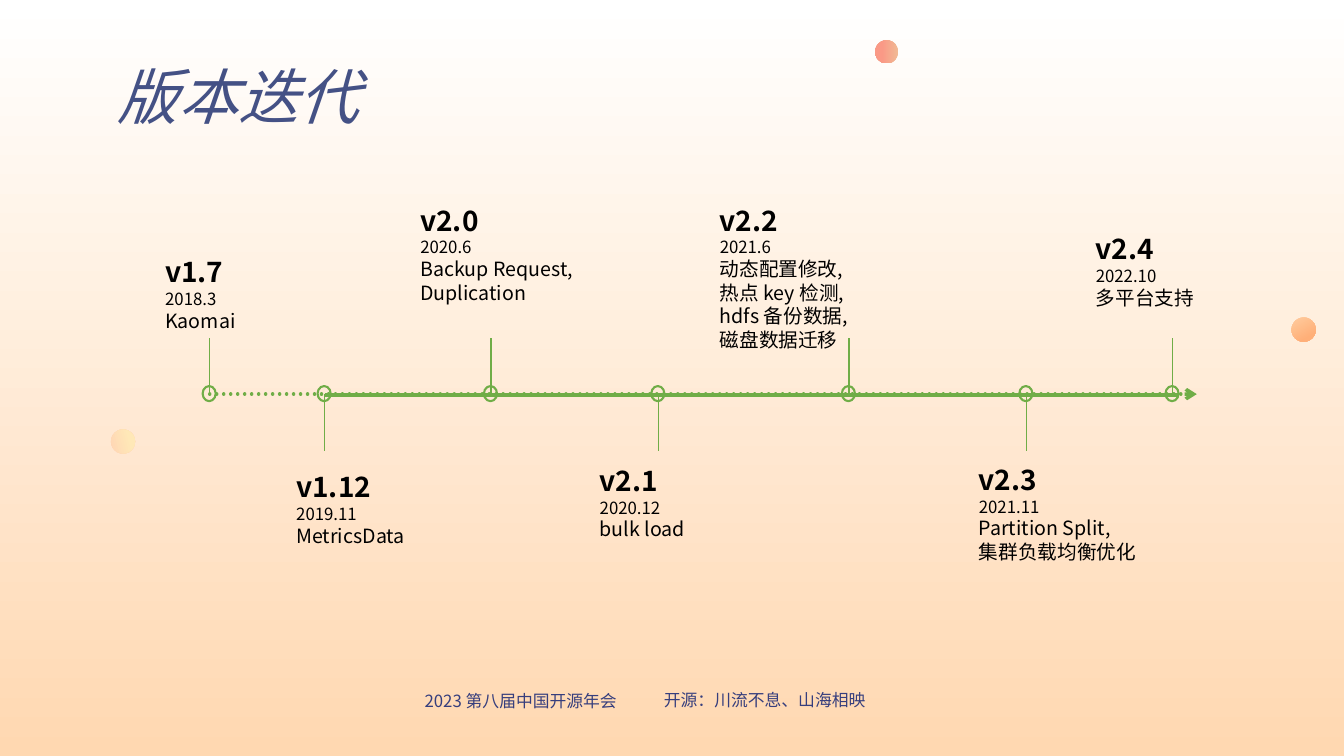
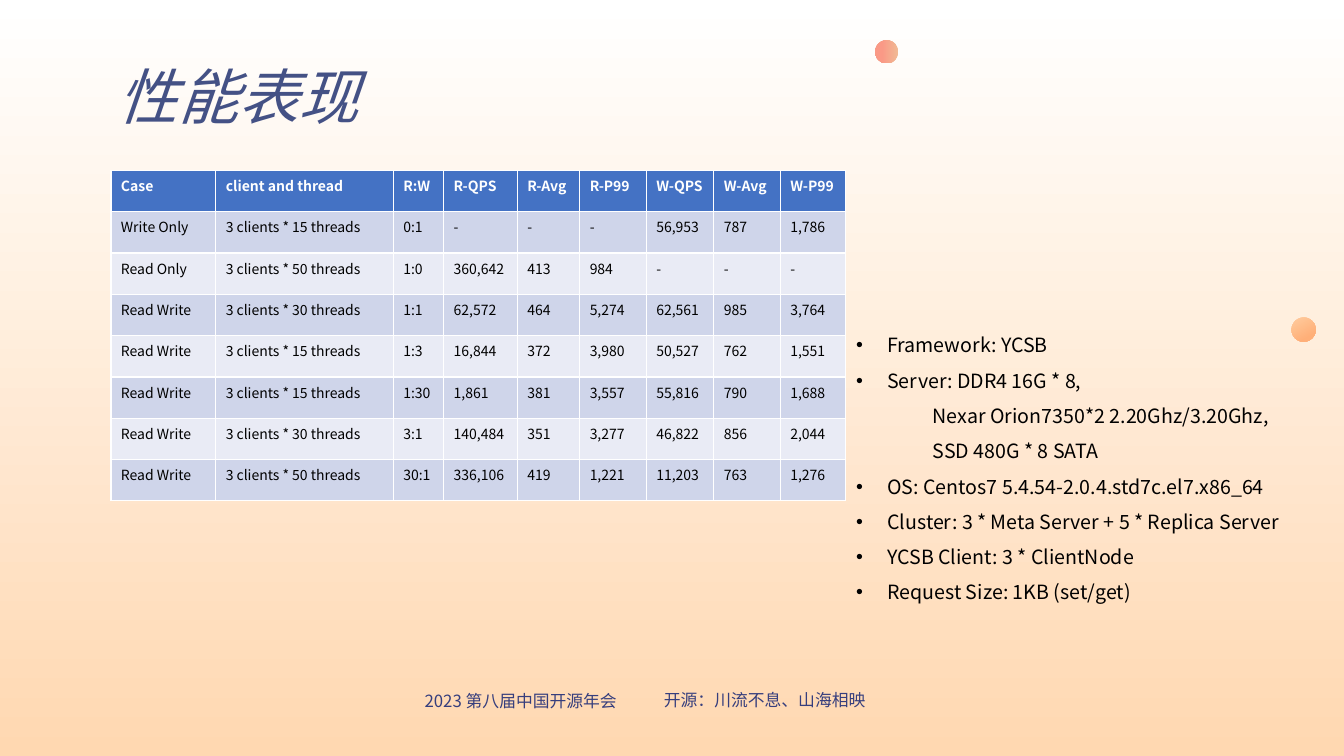
from dataclasses import dataclass

from lxml import etree
from pptx import Presentation
from pptx.dml.color import RGBColor
from pptx.enum.dml import MSO_LINE
from pptx.enum.shapes import MSO_CONNECTOR, MSO_SHAPE
from pptx.enum.text import MSO_ANCHOR, MSO_AUTO_SIZE, PP_ALIGN
from pptx.oxml.ns import qn
from pptx.util import Pt

PX = 9144  # EMU per px, 100 px to the inch
DOTS = MSO_LINE.ROUND_DOT
LINE = MSO_CONNECTOR.STRAIGHT
OVAL = MSO_SHAPE.OVAL
MIDDLE, TOP = MSO_ANCHOR.MIDDLE, MSO_ANCHOR.TOP
FIXED = MSO_AUTO_SIZE.NONE
LEFT, CENTER = PP_ALIGN.LEFT, PP_ALIGN.CENTER
TITLE_BODY, TITLE_ONLY = 1, 5


@dataclass(frozen=True)
class Theme:
    font: str = "Noto Sans CJK SC"
    sky: tuple = ("FFFFFF", "FFD8B1")
    title: str = "445185"
    foot: str = "363E7D"
    ink: str = "000000"
    white: str = "FFFFFF"
    green: str = "70AD47"
    head: str = "4472C4"
    bands: tuple = ("CFD5EA", "E9EBF5")
    title_pt: int = 43
    mark_pt: int = 20
    list_pt: int = 14
    small_pt: int = 12
    cell_pt: int = 10


T = Theme()

FOOTS = [
    ((379, 680, 275, 30), "2023 第八届中国开源年会"),
    ((638, 679, 241, 30), "开源：川流不息、山海相映"),
]
BALLS = [  # left, top, size, turn, colours
    (1281, 315, 24, 331, ("FFD3A7", "FFAF78")),
    (868, 40, 23, 90, ("F1B994", "FA9986")),
    (110, 426, 24, 255, ("FFD3B4", "FFE8B7")),
]
MARKS = [  # x on axis, stem side, label box, lines
    (54, -1, (0, 51, 108, 79), ["v1.7", "2018.3", "Kaomai"]),
    (168, 1, (130, 264, 147, 85), ["v1.12", "2019.11", "MetricsData"]),
    (333, -1, (253, 0, 202, 102),
     ["v2.0", "2020.6", "Backup Request, Duplication"]),
    (499, 1, (431, 258, 136, 102), ["v2.1", "2020.12", "bulk load"]),
    (688, -1, (550, 0, 202, 102),
     ["v2.2", "2021.6", "动态配置修改,", "热点 key 检测,", "hdfs 备份数据,",
      "磁盘数据迁移"]),
    (864, 1, (807, 257, 202, 102),
     ["v2.3", "2021.11", "Partition Split,", "集群负载均衡优化"]),
    (1009, -1, (923, 28, 136, 102), ["v2.4", "2022.10", "多平台支持"]),
]
COLS = [104, 176, 50, 73, 62, 66, 67, 66, 65]
ROWS = [
    ["Case", "client and thread", "R:W", "R-QPS", "R-Avg", "R-P99",
     "W-QPS", "W-Avg", "W-P99"],
    ["Write Only", "3 clients * 15 threads", "0:1", "-", "-", "-",
     "56,953", "787", "1,786"],
    ["Read Only", "3 clients * 50 threads", "1:0", "360,642", "413", "984",
     "-", "-", "-"],
    ["Read Write", "3 clients * 30 threads", "1:1", "62,572", "464", "5,274",
     "62,561", "985", "3,764"],
    ["Read Write", "3 clients * 15 threads", "1:3", "16,844", "372", "3,980",
     "50,527", "762", "1,551"],
    ["Read Write", "3 clients * 15 threads", "1:30", "1,861", "381", "3,557",
     "55,816", "790", "1,688"],
    ["Read Write", "3 clients * 30 threads", "3:1", "140,484", "351", "3,277",
     "46,822", "856", "2,044"],
    ["Read Write", "3 clients * 50 threads", "30:1", "336,106", "419", "1,221",
     "11,203", "763", "1,276"],
]
SETUP = [  # level, text
    (0, "Framework: YCSB"),
    (0, "Server: DDR4 16G * 8,"),
    (1, "Nexar Orion7350*2 2.20Ghz/3.20Ghz,"),
    (1, "SSD 480G * 8 SATA"),
    (0, "OS: Centos7 5.4.54-2.0.4.std7c.el7.x86_64"),
    (0, "Cluster: 3 * Meta Server + 5 * Replica Server"),
    (0, "YCSB Client: 3 * ClientNode"),
    (0, "Request Size: 1KB (set/get)"),
]


def emu(*vals):
    return [v * PX for v in vals]


def rgb(code):
    return RGBColor.from_string(code)


def place(shape, box):
    shape.left, shape.top, shape.width, shape.height = emu(*box)


def style(para, size, color, bold=False, italic=False):
    font = para.font
    font.name, font.size = T.font, Pt(size)
    font.bold, font.italic = bold, italic
    font.color.rgb = rgb(color)
    east = etree.SubElement(font._element, qn("a:ea"))
    east.set("typeface", T.font)


def blend(fill, colors, end=1.0):
    """Fill from top to bottom, reaching the second colour at end."""
    fill.gradient()
    fill.gradient_angle = 270
    for stop, color, pos in zip(fill.gradient_stops, colors, (0, end)):
        stop.color.rgb = rgb(color)
        stop.position = pos


def oval(slide, box):
    shape = slide.shapes.add_shape(OVAL, *emu(*box))
    shape.shadow.inherit = False
    return shape


def rule(slide, start, end, width):
    line = slide.shapes.add_connector(LINE, *emu(*start, *end))
    line.line.color.rgb = rgb(T.green)
    line.line.width = Pt(width)
    etree.SubElement(line._element.spPr, qn("a:effectLst"))
    return line


def label(slide, box, lines):
    frame = slide.shapes.add_textbox(*emu(*box)).text_frame
    frame.word_wrap = True
    frame.text = "\n".join(lines)
    return frame.paragraphs


def trim(slide):
    """Draw the footers and balls that every slide has."""
    for box, text in FOOTS:
        para = label(slide, box, [text])[0]
        para.alignment = CENTER
        style(para, T.small_pt, T.foot)
    for left, top, size, turn, colors in BALLS:
        ball = oval(slide, (left, top, size, size))
        ball.rotation = turn
        ball.line.fill.background()
        blend(ball.fill, colors, 0.71)


def start(deck, layout, title):
    slide = deck.slides.add_slide(deck.slide_layouts[layout])
    shape = slide.shapes.title
    place(shape, (107, 46, 361, 107))
    frame = shape.text_frame
    frame.text = title
    frame.auto_size, frame.vertical_anchor = FIXED, MIDDLE
    para = frame.paragraphs[0]
    para.alignment, para.line_spacing = LEFT, 0.9
    style(para, T.title_pt, T.title, italic=True)
    trim(slide)
    return slide


def timeline(slide, left, top, width):
    axis, stem = top + 194, 56
    first, second = (left + mark[0] for mark in MARKS[:2])
    end = left + width
    dotted = rule(slide, (first, axis), (end, axis), 2.5)
    dotted.line.dash_style = DOTS
    props = dotted.line._get_or_add_ln()
    props.set("cap", "rnd")
    etree.SubElement(props, qn("a:tailEnd")).set("type", "arrow")
    rule(slide, (second, axis + 1), (end - 18, axis + 1), 2.5)
    for x, side, (dx, dy, wide, high), lines in MARKS:
        x += left
        ring = oval(slide, (x - 7, axis - 8, 13, 15))
        ring.fill.background()
        ring.line.color.rgb = rgb(T.green)
        ring.line.width = Pt(1.5)
        rule(slide, (x, axis), (x, axis + side * stem), 1)
        paras = label(slide, (left + dx, top + dy, wide, high), lines)
        for i, para in enumerate(paras):
            size = (T.mark_pt, T.small_pt, T.list_pt)[min(i, 2)]
            style(para, size, T.ink, bold=i == 0)


def grid(slide, left, top, high):
    box = emu(left, top, sum(COLS), high * len(ROWS))
    table = slide.shapes.add_table(len(ROWS), len(COLS), *box).table
    table.horz_banding = False
    for col, wide in zip(table.columns, COLS):
        col.width = wide * PX
    for i, (row, texts) in enumerate(zip(table.rows, ROWS)):
        row.height = high * PX
        head = i == 0
        for cell, text in zip(row.cells, texts):
            cell.text = text
            cell.fill.solid()
            cell.fill.fore_color.rgb = rgb(T.head if head else T.bands[(i - 1) % 2])
            style(cell.text_frame.paragraphs[0], T.cell_pt,
                  T.white if head else T.ink, bold=head)


def bullet(para, level):
    props = para._p.get_or_add_pPr()
    indent, hang = ((31, -31), (76, 0))[level]
    props.set("marL", str(indent * PX))
    props.set("indent", str(hang * PX))
    if level:
        etree.SubElement(props, qn("a:buNone"))
    else:
        etree.SubElement(props, qn("a:buFont")).set("typeface", "Arial")
        etree.SubElement(props, qn("a:buChar")).set("char", "•")


def setup(slide, box):
    shape = slide.placeholders[1]
    place(shape, box)
    frame = shape.text_frame
    frame.text = "\n".join(text for _, text in SETUP)
    frame.auto_size, frame.vertical_anchor = FIXED, TOP
    for para, (level, _) in zip(frame.paragraphs, SETUP):
        para.level = level
        para.line_spacing, para.space_before = 1.5, Pt(0)
        bullet(para, level)
        style(para, T.list_pt, T.ink)


def main():
    deck = Presentation()
    deck.slide_width, deck.slide_height = emu(1333, 750)
    blend(deck.slide_master.background.fill, T.sky)
    timeline(start(deck, TITLE_ONLY, "版本迭代"), 154, 197, 1033)
    slide = start(deck, TITLE_BODY, "性能表现")
    setup(slide, (839, 314, 490, 290))
    grid(slide, 110, 169, 41)
    deck.save("out.pptx")


if __name__ == "__main__":
    main()
